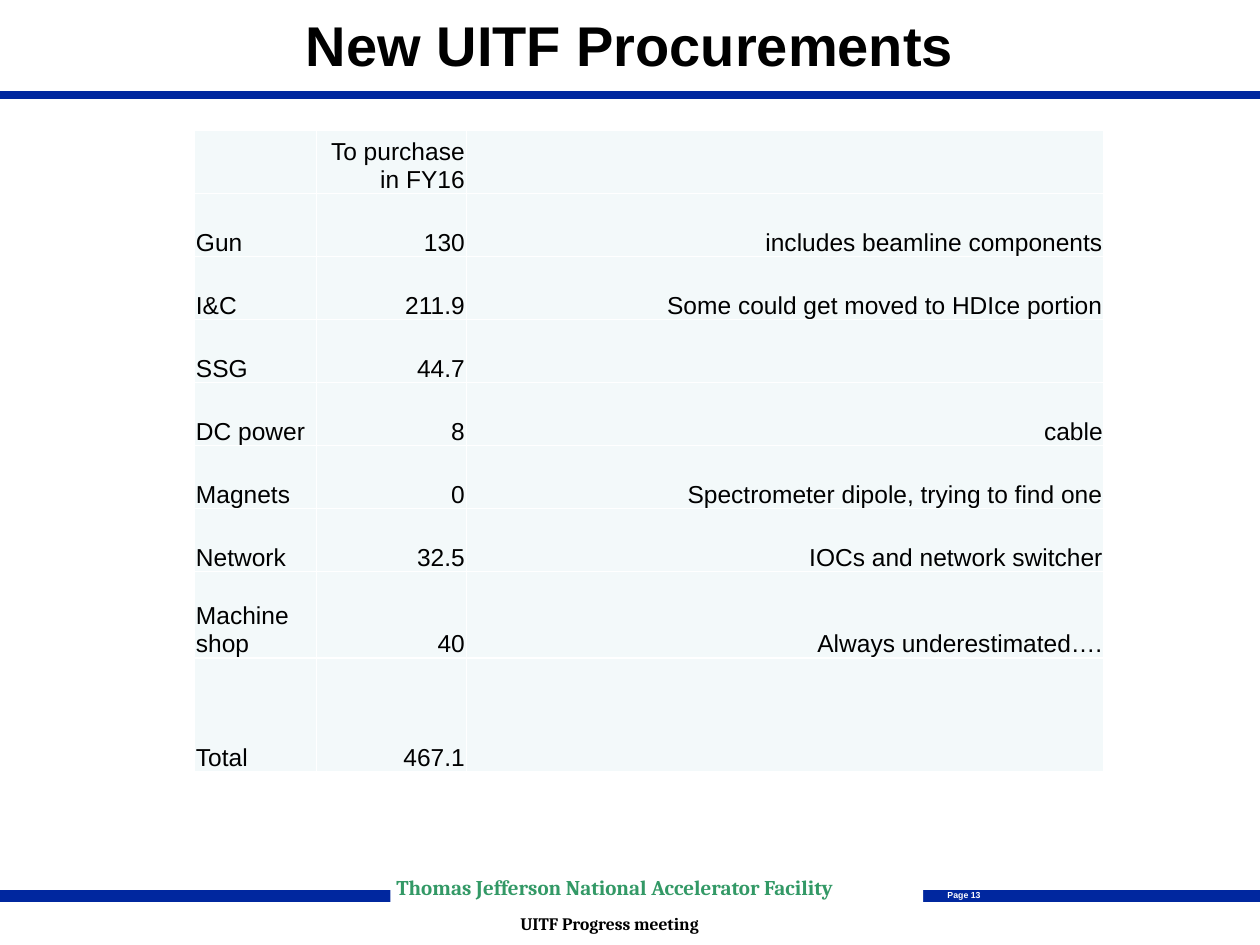
from lxml.etree import SubElement
from pptx import Presentation
from pptx.dml.color import RGBColor
from pptx.enum.shapes import MSO_CONNECTOR
from pptx.enum.text import MSO_ANCHOR, PP_ALIGN
from pptx.oxml.ns import qn
from pptx.util import Cm, Pt

# Content
TITLE = "New UITF Procurements"
PURCHASES = [
    ("", "To purchase in FY16", ""),
    ("Gun", "130", "includes beamline components"),
    ("I&C", "211.9", "Some could get moved to HDIce portion"),
    ("SSG", "44.7", ""),
    ("DC power", "8", "cable"),
    ("Magnets", "0", "Spectrometer dipole, trying to find one"),
    ("Network", "32.5", "IOCs and network switcher"),
    ("Machine shop", "40", "Always underestimated…."),
    ("Total", "467.1", ""),
]
COLUMN_WIDTHS = [2.46, 3.02, 12.86]
ROW_HEIGHTS = [1.27] * 7 + [1.74, 2.29]
ALIGNMENTS = [PP_ALIGN.LEFT, PP_ALIGN.RIGHT, PP_ALIGN.RIGHT]

# Rules: height on the slide in cm, thickness in points
RULES = [(1.91, 4.5), (18.06, 7.25)]

# Footer: text, box in cm, left inset, size, font, colour, fill, line spacing
FOOTER = [
    ("Thomas Jefferson National Accelerator Facility",
     (7.87, 17.73, 10.74, 0.48), 0.12, 12, "Cambria", "339966", "FFFFFF", 0.8),
    ("Page 13", (18.85, 17.93, 1.19, 0.2), 0.25, 5, "Arial", "FFFFFF", None, 1),
    ("UITF Progress meeting",
     (10.49, 18.49, 4.98, 0.36), 0, 10, "Cambria", "000000", "FFFFFF", 0.8),
]


def color(hex_code):
    return RGBColor.from_string(hex_code)


def style(paragraph, size, font_name, hex_code, bold, alignment):
    paragraph.alignment = alignment
    for run in paragraph.runs:
        run.font.size = Pt(size)
        run.font.name = font_name
        run.font.bold = bold
        run.font.color.rgb = color(hex_code)


def set_insets(target, left, top, right, bottom):
    target.margin_left, target.margin_top = Cm(left), Cm(top)
    target.margin_right, target.margin_bottom = Cm(right), Cm(bottom)


def add_borders(cell, hex_code, width):
    properties = cell._tc.get_or_add_tcPr()
    for side in ("lnL", "lnR", "lnT", "lnB"):
        border = SubElement(properties, qn(f"a:{side}"), w=str(Pt(width)))
        fill = SubElement(border, qn("a:solidFill"))
        SubElement(fill, qn("a:srgbClr"), val=hex_code)


presentation = Presentation()
presentation.slide_width, presentation.slide_height = Cm(25.4), Cm(19.05)
slide = presentation.slides.add_slide(presentation.slide_layouts[5])

# Blue rules across the slide
for height, thickness in RULES:
    rule = slide.shapes.add_connector(
        MSO_CONNECTOR.STRAIGHT, 0, Cm(height), presentation.slide_width, Cm(height))
    rule.line.color.rgb = color("00279F")
    rule.line.width = Pt(thickness)
    SubElement(rule._element.spPr, qn("a:effectLst"))

# Footer labels
for text, box, inset, size, font_name, text_color, fill_color, spacing in FOOTER:
    label = slide.shapes.add_textbox(*map(Cm, box))
    if fill_color:
        label.fill.solid()
        label.fill.fore_color.rgb = color(fill_color)
    frame = label.text_frame
    frame.word_wrap = True
    set_insets(frame, inset, 0, 0, 0)
    frame.text = text
    frame.paragraphs[0].line_spacing = spacing
    style(frame.paragraphs[0], size, font_name, text_color, True, PP_ALIGN.LEFT)

# Title
title = slide.shapes.title
title.left, title.top, title.width, title.height = map(Cm, (1.27, 0, 22.86, 1.78))
title.text_frame.text = TITLE
title.text_frame.vertical_anchor = MSO_ANCHOR.MIDDLE
style(title.text_frame.paragraphs[0], 32, "Arial", "000000", True, PP_ALIGN.CENTER)

# Procurement table
table = slide.shapes.add_table(
    len(PURCHASES), len(COLUMN_WIDTHS), Cm(3.92), Cm(2.63),
    Cm(sum(COLUMN_WIDTHS)), Cm(sum(ROW_HEIGHTS))).table
table.first_row = table.horz_banding = False
for column, width in zip(table.columns, COLUMN_WIDTHS):
    column.width = Cm(width)
for row, height, purchase in zip(table.rows, ROW_HEIGHTS, PURCHASES):
    row.height = Cm(height)
    for cell, text, alignment in zip(row.cells, purchase, ALIGNMENTS):
        add_borders(cell, "FFFFFF", 1)
        cell.fill.solid()
        cell.fill.fore_color.rgb = color("F3F9FA")
        cell.vertical_anchor = MSO_ANCHOR.BOTTOM
        set_insets(cell, 0.03, 0.03, 0.03, 0)
        cell.text_frame.text = text
        style(cell.text_frame.paragraphs[0], 14, "Arial", "000000", False, alignment)

presentation.save("out.pptx")
